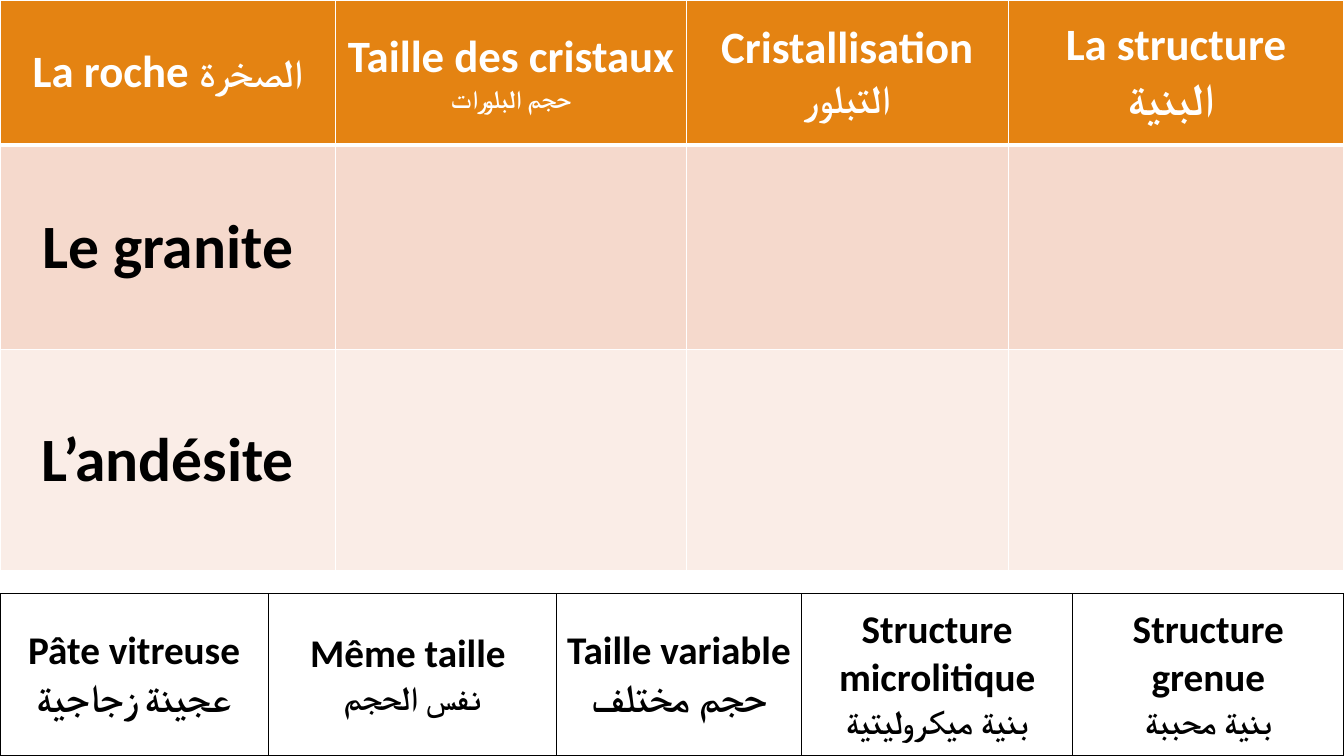
from dataclasses import dataclass

from lxml import etree
from pptx import Presentation
from pptx import util as u
from pptx.dml.color import RGBColor
from pptx.enum import text
from pptx.oxml.ns import qn


@dataclass(frozen=True)
class Theme:
    font: str = "Calibri"
    white: str = "FFFFFF"
    black: str = "000000"
    header: str = "E48312"
    granite: str = "F5D9CC"
    andesite: str = "FAEDE7"
    rock: int = 44
    heading: int = 32
    label: int = 28
    arabic: int = 24
    small: int = 18
    thin: int = 1
    thick: int = 3


class SlideBuilder:
    def __init__(self, slide, theme):
        self.slide = slide
        self.theme = theme

    def table(self, top, widths, heights):
        frame = self.slide.shapes.add_table(
            len(heights), len(widths), 0, u.Inches(top),
            u.Inches(sum(widths)), u.Inches(sum(heights)))
        table = frame.table
        for name, value in {"first_row": False, "horz_banding": False}.items():
            setattr(table, name, value)
        for column, width in zip(table.columns, widths):
            column.width = u.Inches(width)
        for row, height in zip(table.rows, heights):
            row.height = u.Inches(height)
        return table

    def cell(self, cell, paragraphs, fill, color, border, top=1, bottom=1):
        cell.fill.solid()
        cell.fill.fore_color.rgb = RGBColor.from_string(fill)
        cell.vertical_anchor = text.MSO_ANCHOR.MIDDLE
        self.borders(cell, border, top, bottom)
        frame = cell.text_frame
        for index, runs in enumerate(paragraphs):
            paragraph = frame.add_paragraph() if index else frame.paragraphs[0]
            paragraph.alignment = text.PP_ALIGN.CENTER
            for wording, size in runs:
                self.run(paragraph, wording, size, color)

    def run(self, paragraph, wording, size, color):
        run = paragraph.add_run()
        run.text = wording
        values = {"name": self.theme.font, "size": u.Pt(size), "bold": True}
        for name, value in values.items():
            setattr(run.font, name, value)
        run.font.color.rgb = RGBColor.from_string(color)
        properties = run._r.get_or_add_rPr()
        etree.SubElement(properties, qn("a:cs"), typeface=self.theme.font)

    def borders(self, cell, color, top, bottom):
        properties = cell._tc.get_or_add_tcPr()
        widths = {"lnL": self.theme.thin, "lnR": self.theme.thin,
                  "lnT": top, "lnB": bottom}
        for index, (side, width) in enumerate(widths.items()):
            line = etree.Element(qn(f"a:{side}"), w=str(u.Pt(width)))
            fill = etree.SubElement(line, qn("a:solidFill"))
            etree.SubElement(fill, qn("a:srgbClr"), val=color)
            properties.insert(index, line)


def main():
    theme = Theme()
    presentation = Presentation()
    presentation.slide_width = u.Inches(13.33)
    presentation.slide_height = u.Inches(7.5)
    slide = presentation.slides.add_slide(presentation.slide_layouts[6])
    builder = SlideBuilder(slide, theme)

    headings = [
        [[("La roche ", theme.heading), ("الصخرة", theme.label)]],
        [[("Taille des cristaux", theme.heading)],
         [("حجم البلورات", theme.small)]],
        [[("Cristallisation ", theme.heading), ("التبلور", theme.label)]],
        [[("La structure", theme.heading)], [("البنية ", theme.heading)]],
    ]
    empty = [[]] * 3
    rows = [
        (headings, theme.header, theme.white, theme.thin, theme.thick),
        ([[[("Le granite", theme.rock)]]] + empty,
         theme.granite, theme.black, theme.thick, theme.thin),
        ([[[("L’andésite", theme.rock)]]] + empty,
         theme.andesite, theme.black, theme.thin, theme.thin),
    ]
    rocks = builder.table(0, [3.33, 3.48, 3.19, 3.33], [1.44, 2.03, 2.19])
    for row, (contents, fill, color, top, bottom) in zip(rocks.rows, rows):
        for cell, paragraphs in zip(row.cells, contents):
            builder.cell(cell, paragraphs, fill, color, theme.white, top, bottom)

    answers = [
        [[("Pâte vitreuse", theme.label)], [("عجينة زجاجية", theme.label)]],
        [[("Même taille  ", theme.label), ("نفس الحجم", theme.arabic)]],
        [[("Taille variable", theme.label)], [("حجم مختلف", theme.label)]],
        [[("Structure microlitique", theme.label)],
         [("بنية ميكروليتية", theme.arabic)]],
        [[("Structure grenue", theme.label)], [("بنية محببة", theme.arabic)]],
    ]
    choices = builder.table(5.89, [2.66, 2.86, 2.43, 2.69, 2.69], [1.61])
    for cell, paragraphs in zip(choices.rows[0].cells, answers):
        builder.cell(cell, paragraphs, theme.white, theme.black, theme.black)

    presentation.save("out.pptx")


if __name__ == "__main__":
    main()
